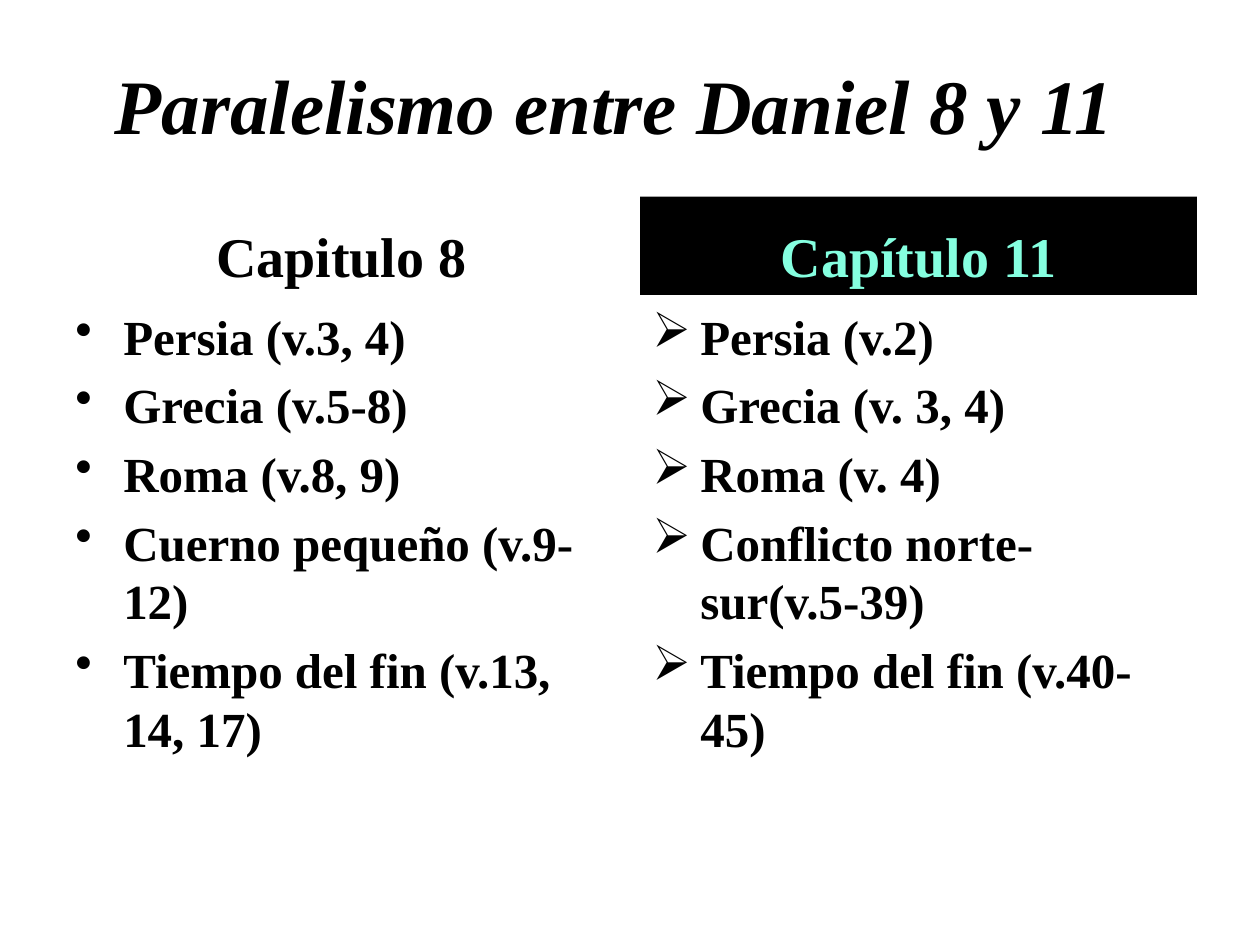
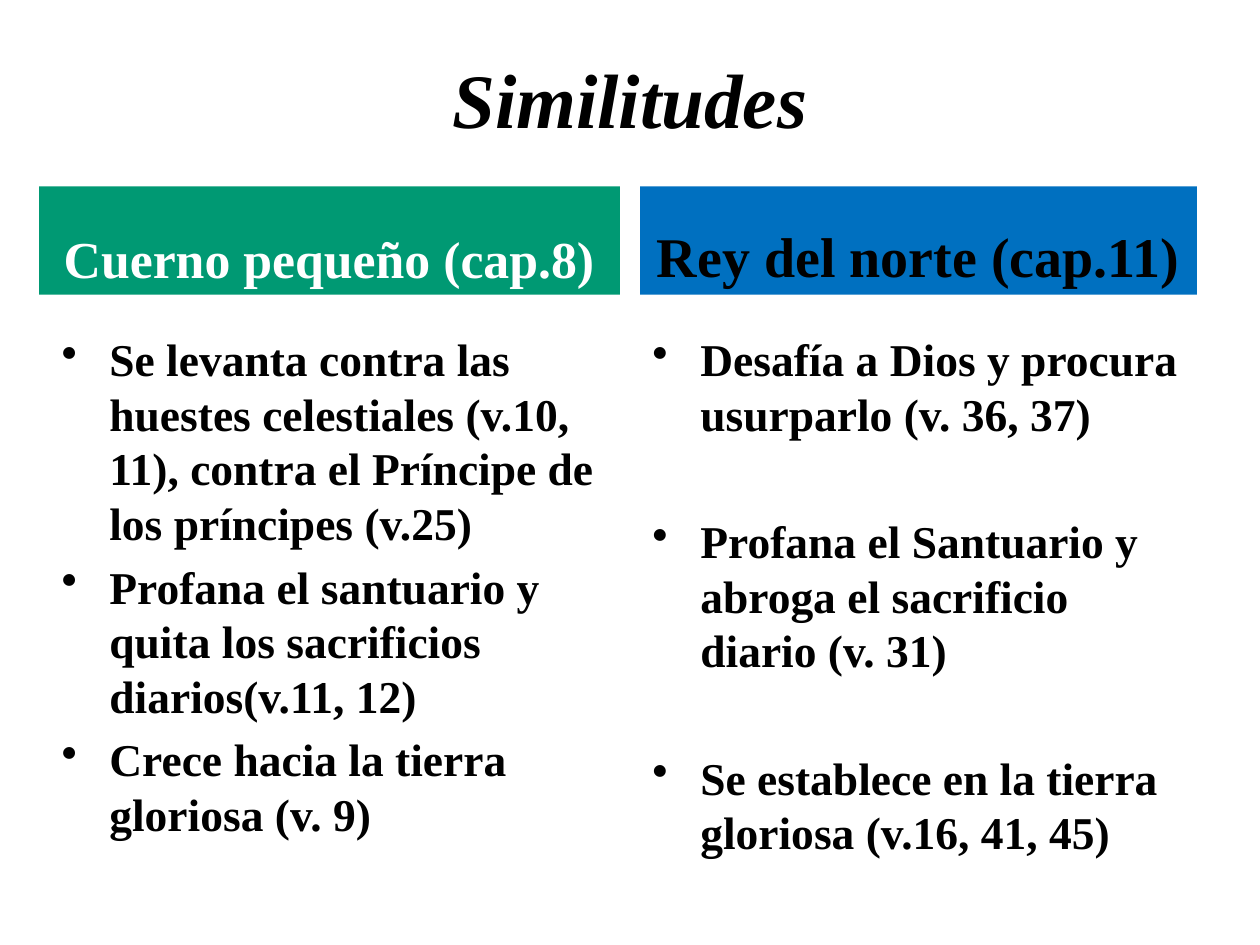
from pptx import Presentation
from pptx.dml.color import RGBColor
from pptx.enum.shapes import MSO_SHAPE
from pptx.enum.text import MSO_ANCHOR, PP_ALIGN
from pptx.oxml.ns import qn
from pptx.util import Inches, Pt
from lxml import etree

FONT = "Times New Roman"
INK = {"black": "000000", "white": "FFFFFF", "mint": "85FFE0",
       "green": "009973", "blue": "0070C0"}
RIGHT, WIDE = 5.08, 4.42  # left edge and width of the right column
HEAD_END = 2.34  # bottom of the heading bands


def style(para, size, color="black", italic=False):
    for run in para.runs:
        font = run.font
        font.name, font.size = FONT, Pt(size)
        font.bold, font.italic = True, italic
        font.color.rgb = RGBColor.from_string(INK[color])


def add_text(slide, box):
    frame = slide.shapes.add_textbox(*map(Inches, box)).text_frame
    frame.word_wrap = True
    return frame


def add_title(slide, box, text):
    frame = add_text(slide, box)
    frame.vertical_anchor = MSO_ANCHOR.MIDDLE
    frame.text = text
    para = frame.paragraphs[0]
    para.alignment = PP_ALIGN.CENTER
    style(para, 44, italic=True)


def add_head(slide, box, text, fill, color, size=32):
    """Add a filled band with a column heading at its foot."""
    band = slide.shapes.add_shape(MSO_SHAPE.RECTANGLE, *map(Inches, box))
    band.shadow.inherit = False
    band.fill.solid()
    band.fill.fore_color.rgb = RGBColor.from_string(INK[fill])
    band.line.fill.background()
    frame = band.text_frame
    frame.word_wrap = True
    frame.vertical_anchor = MSO_ANCHOR.BOTTOM
    frame.text = text
    para = frame.paragraphs[0]
    para.alignment = PP_ALIGN.CENTER
    style(para, size, color)


def add_list(slide, box, items, size, gap, mark="•"):
    frame = add_text(slide, box)
    for i, item in enumerate(items):
        para = frame.add_paragraph() if i else frame.paragraphs[0]
        para.text = item
        if i:
            para.space_before = Pt(gap)
        props = para._p.get_or_add_pPr()
        props.set("marL", str(Inches(0.38)))
        props.set("indent", str(-Inches(0.38)))
        etree.SubElement(props, qn("a:buChar")).set("char", mark)
        style(para, size)


def add_parallel(slide):
    top, left = 1.56, 0.5
    add_title(slide, (0.23, 0.31, 9.3, 1.02), "Paralelismo entre Daniel 8 y 11")
    columns = [
        (left, "Capitulo 8", "white", "black", "•",
         ["Persia (v.3, 4)", "Grecia (v.5-8)", "Roma (v.8, 9)",
          "Cuerno pequeño (v.9-12)", "Tiempo del fin (v.13, 14, 17)"]),
        (RIGHT, "Capítulo 11", "black", "mint", "➢",
         ["Persia (v.2)", "Grecia (v. 3, 4)", "Roma (v. 4)",
          "Conflicto norte-sur(v.5-39)", "Tiempo del fin (v.40-45)"]),
    ]
    for x, head, fill, color, mark, items in columns:
        add_head(slide, (x, top, WIDE, HEAD_END - top), head, fill, color)
        add_list(slide, (x, 2.38, WIDE, 4.32), items, 28, 5.6, mark)


def add_likeness(slide):
    top, body = 1.48, 2.58
    high = HEAD_END - top
    add_title(slide, (0.5, 0.3, 9, 0.95), "Similitudes")
    add_head(slide, (0.31, top, 4.61, high), "Cuerno pequeño (cap.8)",
             "green", "white", 29.6)
    add_list(slide, (0.39, body, 4.53, 4.44), [
        "Se levanta contra las huestes celestiales (v.10, 11), "
        "contra el Príncipe de los príncipes (v.25)",
        "Profana el santuario y quita los sacrificios diarios(v.11, 12)",
        "Crece hacia la tierra gloriosa (v. 9)"], 26, 5.2)
    add_head(slide, (RIGHT, top, WIDE, high), "Rey del norte (cap.11)",
             "blue", "black")
    add_list(slide, (RIGHT, body, WIDE, 4.92), [
        "Desafía a Dios y procura usurparlo (v. 36, 37)",
        "Profana el Santuario y abroga el sacrificio diario (v. 31)",
        "Se establece en la tierra gloriosa (v.16, 41, 45)"], 26, 41.6)


def main():
    deck = Presentation()
    deck.slide_width, deck.slide_height = Inches(10), Inches(7.5)
    for build in (add_parallel, add_likeness):
        build(deck.slides.add_slide(deck.slide_layouts[6]))
    deck.save("out.pptx")


if __name__ == "__main__":
    main()
